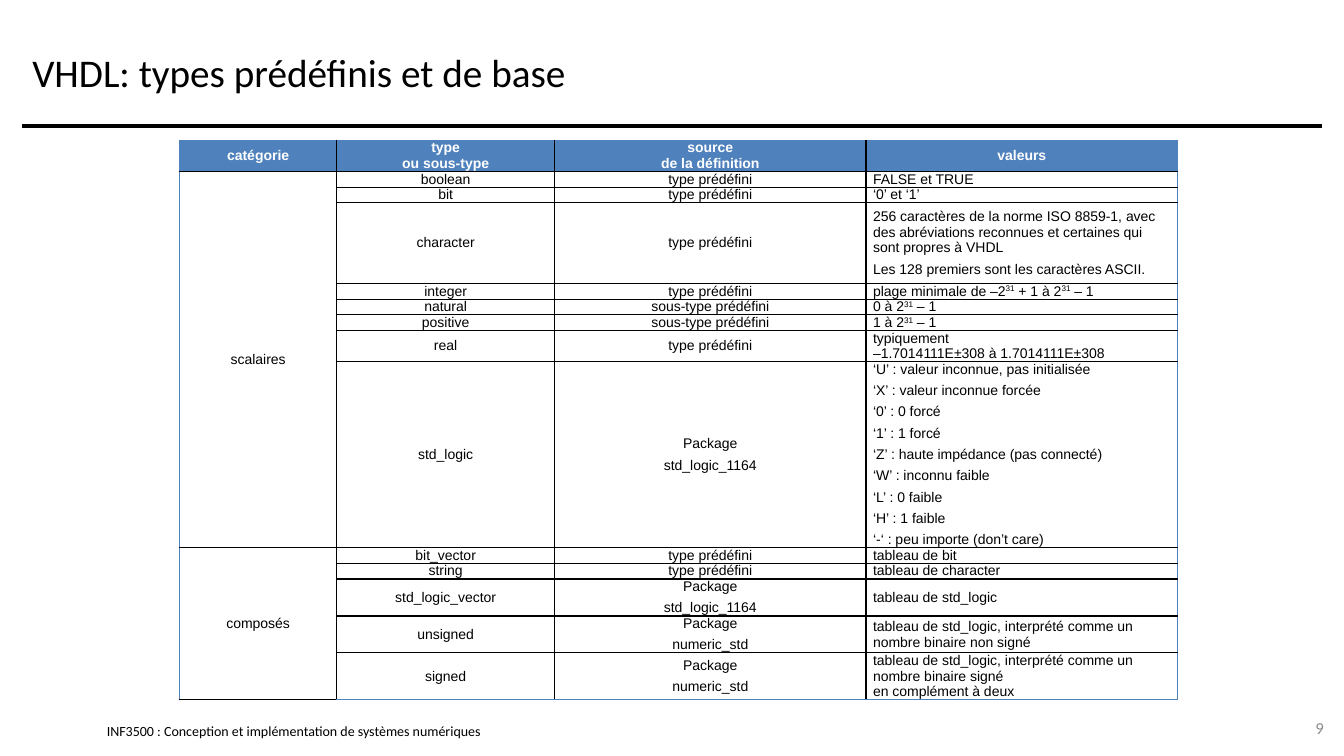
from lxml.etree import SubElement
from pptx import Presentation
from pptx.dml.color import RGBColor
from pptx.enum.shapes import MSO_CONNECTOR
from pptx.enum.text import MSO_ANCHOR, PP_ALIGN
from pptx.oxml.ns import qn
from pptx.util import Pt

PX = 9144  # 100 px to the inch
COLORS = {"ink": "000000", "paper": "FFFFFF", "accent": "4F81BD", "muted": "8C8C8C"}

COLUMN_WIDTHS = [156, 216, 309, 309]
ROW_HEIGHTS = [29, 15, 15, 80, 15, 15, 15, 29, 181, 15, 15, 36, 36, 44]
HEADER = ["catégorie", "type\nou sous-type", "source\nde la définition", "valeurs"]

# A tuple holds several paragraphs, \n breaks a line and ^…^ marks an exponent.
PREDEFINED = "type prédéfini"
SUBTYPE = "sous-type prédéfini"
LOGIC_PACKAGE = ("Package", "std_logic_1164")
NUMERIC_PACKAGE = ("Package", "numeric_std")
CATEGORIES = {
    "scalaires": [
        ("boolean", PREDEFINED, "FALSE et TRUE"),
        ("bit", PREDEFINED, "‘0’ et ‘1’"),
        ("character", PREDEFINED, (
            "256 caractères de la norme ISO 8859-1, avec des abréviations "
            "reconnues et certaines qui sont propres à VHDL",
            "Les 128 premiers sont les caractères ASCII.")),
        ("integer", PREDEFINED, "plage minimale de –2^31^ + 1 à 2^31^ – 1"),
        ("natural", SUBTYPE, "0 à 2^31^ – 1"),
        ("positive", SUBTYPE, "1 à 2^31^ – 1"),
        ("real", PREDEFINED, "typiquement\n–1.7014111E±308 à 1.7014111E±308"),
        ("std_logic", LOGIC_PACKAGE, (
            "‘U’ : valeur inconnue, pas initialisée",
            "‘X’ : valeur inconnue forcée",
            "‘0’ : 0 forcé",
            "‘1’ : 1 forcé",
            "‘Z’ : haute impédance (pas connecté)",
            "‘W’ : inconnu faible",
            "‘L’ : 0 faible",
            "‘H’ : 1 faible",
            "‘-‘ : peu importe (don’t care)")),
    ],
    "composés": [
        ("bit_vector", PREDEFINED, "tableau de bit"),
        ("string", PREDEFINED, "tableau de character"),
        ("std_logic_vector", LOGIC_PACKAGE, "tableau de std_logic"),
        ("unsigned", NUMERIC_PACKAGE,
         "tableau de std_logic, interprété comme un nombre binaire non signé"),
        ("signed", NUMERIC_PACKAGE,
         "tableau de std_logic, interprété comme un nombre binaire signé\n"
         "en complément à deux"),
    ],
}


def color(name):
    return RGBColor.from_string(COLORS[name])


def px(*lengths):
    return [length * PX for length in lengths]


def apply(target, values):
    for name, value in values.items():
        setattr(target, name, value)


def add_span(para, text, ink, **font):
    span = para.add_run()
    span.text = text
    apply(span.font, font)
    span.font.color.rgb = color(ink)
    return span


def fill_frame(frame, text, size, ink, align=PP_ALIGN.LEFT, margin=10):
    """Put one line of Calibri in a title or text box."""
    apply(frame, {"word_wrap": True, "vertical_anchor": MSO_ANCHOR.MIDDLE,
                  "margin_left": margin * PX, "margin_right": margin * PX,
                  "margin_top": margin // 2 * PX, "margin_bottom": margin // 2 * PX})
    para = frame.paragraphs[0]
    para.alignment = align
    add_span(para, text, ink, name="Calibri", size=Pt(size))


def add_label(page, box, *text_format):
    fill_frame(page.shapes.add_textbox(*px(*box)).text_frame, *text_format)


def add_rule(page, left, right, y):
    rule = page.shapes.add_connector(MSO_CONNECTOR.STRAIGHT, *px(left, y, right, y))
    rule.line.width = Pt(3)
    rule.line.color.rgb = color("ink")
    SubElement(rule._element.spPr, qn("a:effectLst"))


def set_borders(cell, sides):
    """Draw 1 pt borders; sides gives the colour of each edge, left to bottom."""
    properties = cell._tc.get_or_add_tcPr()
    for position, (side, name) in enumerate(sides.items()):
        line = properties.makeelement(qn(f"a:{side}"), {"w": str(Pt(1))})
        solid = SubElement(line, qn("a:solidFill"))
        SubElement(solid, qn("a:srgbClr"), val=COLORS[name])
        properties.insert(position, line)


def write_cell(cell, content, align, ink, bold):
    apply(cell, {"vertical_anchor": MSO_ANCHOR.MIDDLE, "margin_left": 7 * PX,
                 "margin_right": 7 * PX, "margin_top": 0, "margin_bottom": 0})
    paragraphs = content if isinstance(content, tuple) else (content,)
    frame = cell.text_frame
    for index, text in enumerate(paragraphs):
        para = frame.add_paragraph() if index else frame.paragraphs[0]
        apply(para, {"alignment": align, "space_before": Pt(2 if index else 0),
                     "space_after": Pt(2)})
        for line_index, line in enumerate(text.split("\n")):
            if line_index:
                para.add_line_break()
            for part, piece in enumerate(line.split("^")):
                span = add_span(para, piece, ink, name="Arial", size=Pt(10), bold=bold)
                if part % 2:
                    span.font._element.set("baseline", "30000")


def add_types_table(page, left, top):
    rows = [HEADER]
    for category, types in CATEGORIES.items():
        rows += [(category if index == 0 else None, *entry)
                 for index, entry in enumerate(types)]
    last_row, last_column = len(rows) - 1, len(HEADER) - 1
    table = page.shapes.add_table(
        len(rows), len(HEADER),
        *px(left, top, sum(COLUMN_WIDTHS), sum(ROW_HEIGHTS))).table
    table.horz_banding = False
    for column, width in zip(table.columns, COLUMN_WIDTHS):
        column.width = width * PX
    for row, height in zip(table.rows, ROW_HEIGHTS):
        row.height = height * PX

    for r, row in enumerate(rows):
        for c, content in enumerate(row):
            cell = table.cell(r, c)
            if content is not None:
                left_aligned = r > 0 and c == last_column
                write_cell(cell, content,
                           PP_ALIGN.LEFT if left_aligned else PP_ALIGN.CENTER,
                           "ink" if r else "paper", r == 0)
            cell.fill.solid()
            cell.fill.fore_color.rgb = color("paper" if r else "accent")
            outer = {"lnL": c == 0, "lnR": c == last_column,
                     "lnT": r == 0, "lnB": r == last_row}
            set_borders(cell, {side: "accent" if edge else "ink"
                               for side, edge in outer.items()})

    start = 1
    for types in CATEGORIES.values():
        end = start + len(types)
        table.cell(start, 0).merge(table.cell(end - 1, 0))
        start = end


def main():
    deck = Presentation()
    deck.slide_width, deck.slide_height = px(1333, 750)
    page = deck.slides.add_slide(deck.slide_layouts[5])

    title = page.shapes.title
    title.left, title.top, title.width, title.height = px(22, 17, 1289, 108)
    fill_frame(title.text_frame, "VHDL: types prédéfinis et de base", 28, "ink")
    add_rule(page, 22, 1311, 125)
    add_types_table(page, 178, 139)
    add_label(page, (106, 717, 511, 17),
              "INF3500 : Conception et implémentation de systèmes numériques",
              10, "ink", PP_ALIGN.LEFT, 0)
    add_label(page, (1256, 702, 67, 40), "9", 12, "muted", PP_ALIGN.RIGHT)
    deck.save("out.pptx")


if __name__ == "__main__":
    main()
